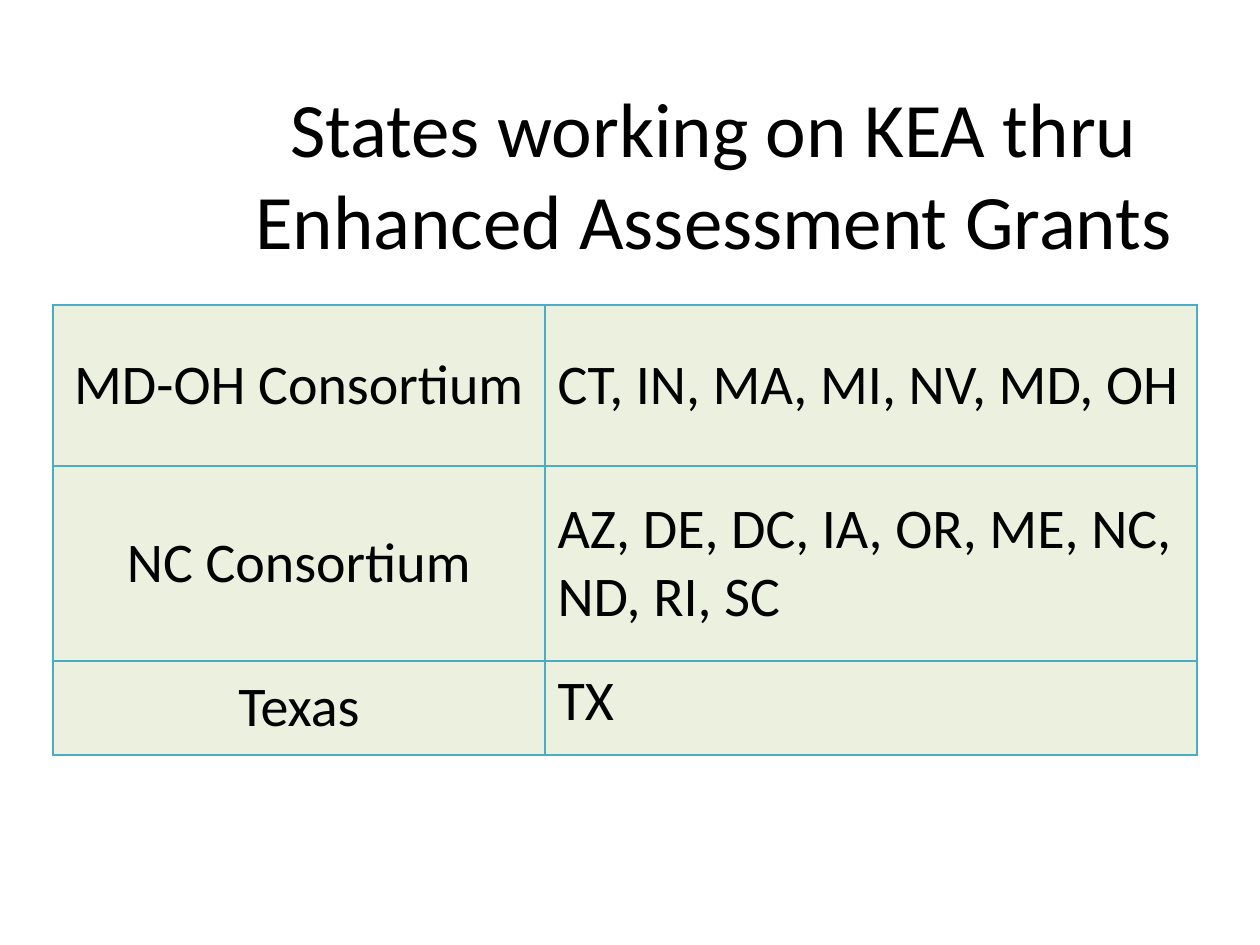
from dataclasses import dataclass

from lxml.etree import SubElement
from pptx import Presentation
from pptx.dml.color import RGBColor
from pptx.enum.text import MSO_ANCHOR, PP_ALIGN
from pptx.oxml.ns import qn
from pptx.util import Emu, Pt

SCALE = 914400 / 126
BORDER = "4BACC6"
FILL = "EBF1DE"


@dataclass
class Grant:
    """One table row: who leads the grant and which states take part."""
    lead: str
    states: str
    height: int
    anchor: MSO_ANCHOR = MSO_ANCHOR.MIDDLE


GRANTS = [
    Grant("MD-OH Consortium", "CT, IN, MA, MI, NV, MD, OH", 161),
    Grant("NC Consortium", "AZ, DE, DC, IA, OR, ME, NC, ND, RI, SC", 195),
    Grant("Texas", "TX", 94, MSO_ANCHOR.TOP),
]
COLS = [492, 652]


def px(n: int) -> Emu:
    """Turn pixels into EMU."""
    return Emu(round(n * SCALE))


def rgb(color: str) -> RGBColor:
    """Turn a hex string into a colour."""
    return RGBColor.from_string(color)


def write(tf, text: str, *, size: int, align=PP_ALIGN.LEFT, color: str = "000000") -> None:
    """Write one formatted paragraph into a text frame."""
    p = tf.paragraphs[0]
    p.alignment = align
    r = p.add_run()
    r.text = text
    r.font.size = Pt(size)
    r.font.name = "Calibri"
    r.font.color.rgb = rgb(color)


def add_borders(cell, color: str) -> None:
    """Draw a one-point line on all four sides of a cell."""
    tc_pr = cell._tc.get_or_add_tcPr()
    for side in ("a:lnL", "a:lnR", "a:lnT", "a:lnB"):
        ln = SubElement(tc_pr, qn(side), w=str(Pt(1)))
        fill = SubElement(ln, qn("a:solidFill"))
        SubElement(fill, qn("a:srgbClr"), val=color)


def fill_cell(cell, text: str, *, align, anchor) -> None:
    """Style a table cell and write its text."""
    add_borders(cell, BORDER)
    cell.fill.solid()
    cell.fill.fore_color.rgb = rgb(FILL)
    cell.vertical_anchor = anchor
    write(cell.text_frame, text, size=32, align=align)


def add_title(s, text: str) -> None:
    """Place and write the slide title."""
    sp = s.shapes.title
    sp.left, sp.top, sp.width, sp.height = px(210), px(94), px(1008), px(158)
    sp.text_frame.vertical_anchor = MSO_ANCHOR.MIDDLE
    write(sp.text_frame, text, size=44, align=PP_ALIGN.CENTER)


def add_grants(s, grants: list[Grant]) -> None:
    """Draw the table of grants."""
    height = sum(g.height for g in grants)
    table = s.shapes.add_table(len(grants), len(COLS), px(53), px(305),
                               px(sum(COLS)), px(height)).table
    table.first_row = table.horz_banding = False
    for col, width in zip(table.columns, COLS):
        col.width = px(width)
    for row, g in zip(table.rows, grants):
        row.height = px(g.height)
        lead, states = row.cells
        fill_cell(lead, g.lead, align=PP_ALIGN.CENTER, anchor=MSO_ANCHOR.MIDDLE)
        fill_cell(states, g.states, align=PP_ALIGN.LEFT, anchor=g.anchor)


def main() -> None:
    """Build the slide and save it."""
    prs = Presentation()
    prs.slide_width, prs.slide_height = px(1260), px(945)
    s = prs.slides.add_slide(prs.slide_layouts[5])
    add_title(s, "States working on KEA thru Enhanced Assessment Grants")
    add_grants(s, GRANTS)
    prs.save("out.pptx")


if __name__ == "__main__":
    main()
